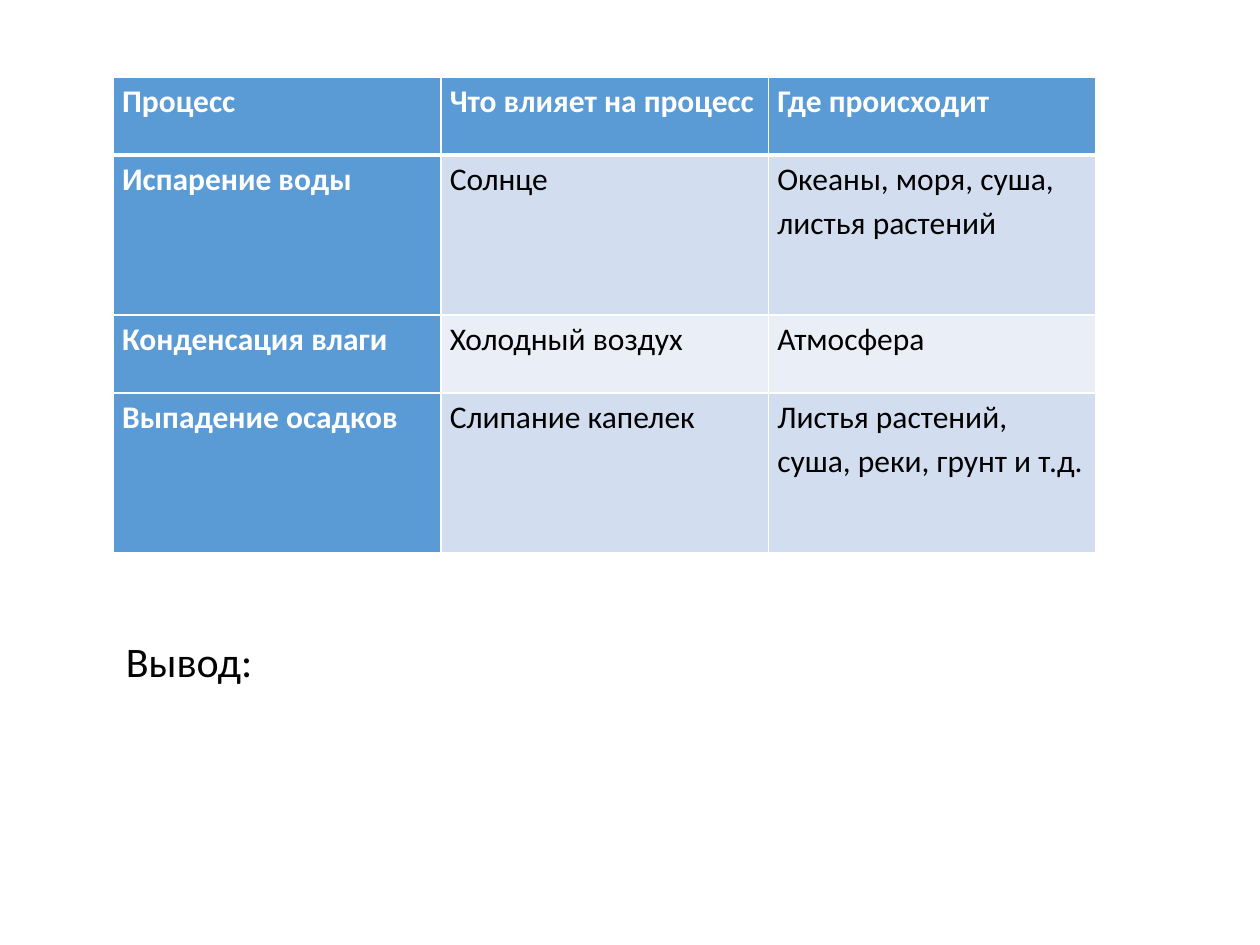
from lxml import etree
from pptx import Presentation
from pptx.dml.color import RGBColor
from pptx.enum.text import MSO_ANCHOR, MSO_AUTO_SIZE
from pptx.oxml.ns import qn
from pptx.util import Inches, Pt

MIDDLE = MSO_ANCHOR.MIDDLE
GROW = MSO_AUTO_SIZE.SHAPE_TO_FIT_TEXT

WHITE = RGBColor(0xFF, 0xFF, 0xFF)
BLACK = RGBColor(0x00, 0x00, 0x00)
BLUE = RGBColor(0x5B, 0x9B, 0xD5)
BAND_DARK = RGBColor(0xD2, 0xDE, 0xEF)
BAND_LIGHT = RGBColor(0xEA, 0xEF, 0xF7)

FONT = "Calibri"
LEFT = 0.9
COLUMN_WIDTH = 2.6
ROW_HEIGHTS = [0.62, 1.27, 0.62, 1.27]
WATER_CYCLE = [
    ["Процесс", "Что влияет на процесс", "Где происходит"],
    ["Испарение воды", "Солнце", "Океаны, моря, суша, листья растений"],
    ["Конденсация влаги", "Холодный воздух", "Атмосфера"],
    ["Выпадение осадков", "Слипание капелек",
     "Листья растений, суша, реки, грунт и т.д."],
]
CELL_MARGINS = {
    "margin_left": Inches(0.07),
    "margin_right": Inches(0.07),
    "margin_top": 0,
    "margin_bottom": 0,
}


def set_attributes(target, values):
    for name, value in values.items():
        setattr(target, name, value)


def write_text(text_frame, text, size, color, bold=False):
    """Fill the first paragraph with one formatted run and return the paragraph."""
    paragraph = text_frame.paragraphs[0]
    run = paragraph.add_run()
    run.text = text
    set_attributes(run.font, {"name": FONT, "size": Pt(size), "bold": bold})
    run.font.color.rgb = color
    return paragraph


def set_borders(cell, widths):
    """Draw white cell borders; widths maps a:lnL and its siblings to points."""
    properties = cell._tc.get_or_add_tcPr()
    for position, (tag, width) in enumerate(widths.items()):
        line = etree.Element(qn(tag), w=str(Pt(width)))
        fill = etree.SubElement(line, qn("a:solidFill"))
        etree.SubElement(fill, qn("a:srgbClr"), val=str(WHITE))
        properties.insert(position, line)


def format_cell(cell, text, row, column):
    is_header = row == 0 or column == 0
    band = BAND_DARK if row % 2 else BAND_LIGHT
    set_attributes(cell, CELL_MARGINS)
    cell.fill.solid()
    cell.fill.fore_color.rgb = BLUE if is_header else band
    color = WHITE if is_header else BLACK
    paragraph = write_text(cell.text_frame, text, 18, color, is_header)
    paragraph.line_spacing = 1.15
    set_borders(cell, {
        "a:lnL": 1,
        "a:lnR": 1,
        "a:lnT": 3 if row == 1 else 1,
        "a:lnB": 3 if row == 0 else 1,
    })


def add_process_table(slide):
    column_count = len(WATER_CYCLE[0])
    table = slide.shapes.add_table(
        len(WATER_CYCLE), column_count, Inches(LEFT), Inches(0.61),
        Inches(COLUMN_WIDTH * column_count), Inches(sum(ROW_HEIGHTS)),
    ).table
    for column in table.columns:
        column.width = Inches(COLUMN_WIDTH)
    for row, height in zip(table.rows, ROW_HEIGHTS):
        row.height = Inches(height)
    for row, texts in enumerate(WATER_CYCLE):
        for column, text in enumerate(texts):
            format_cell(table.cell(row, column), text, row, column)


def add_conclusion(slide):
    shape = slide.shapes.add_textbox(
        Inches(LEFT), Inches(4.99), Inches(8.03), Inches(0.5))
    set_attributes(shape.text_frame, {
        "word_wrap": True,
        "vertical_anchor": MIDDLE,
        "auto_size": GROW,
    })
    write_text(shape.text_frame, "Вывод:", 24, BLACK)


def main():
    presentation = Presentation()
    presentation.slide_width = Inches(10)
    presentation.slide_height = Inches(7.5)
    slide = presentation.slides.add_slide(presentation.slide_layouts[6])
    add_process_table(slide)
    add_conclusion(slide)
    presentation.save("out.pptx")


if __name__ == "__main__":
    main()
